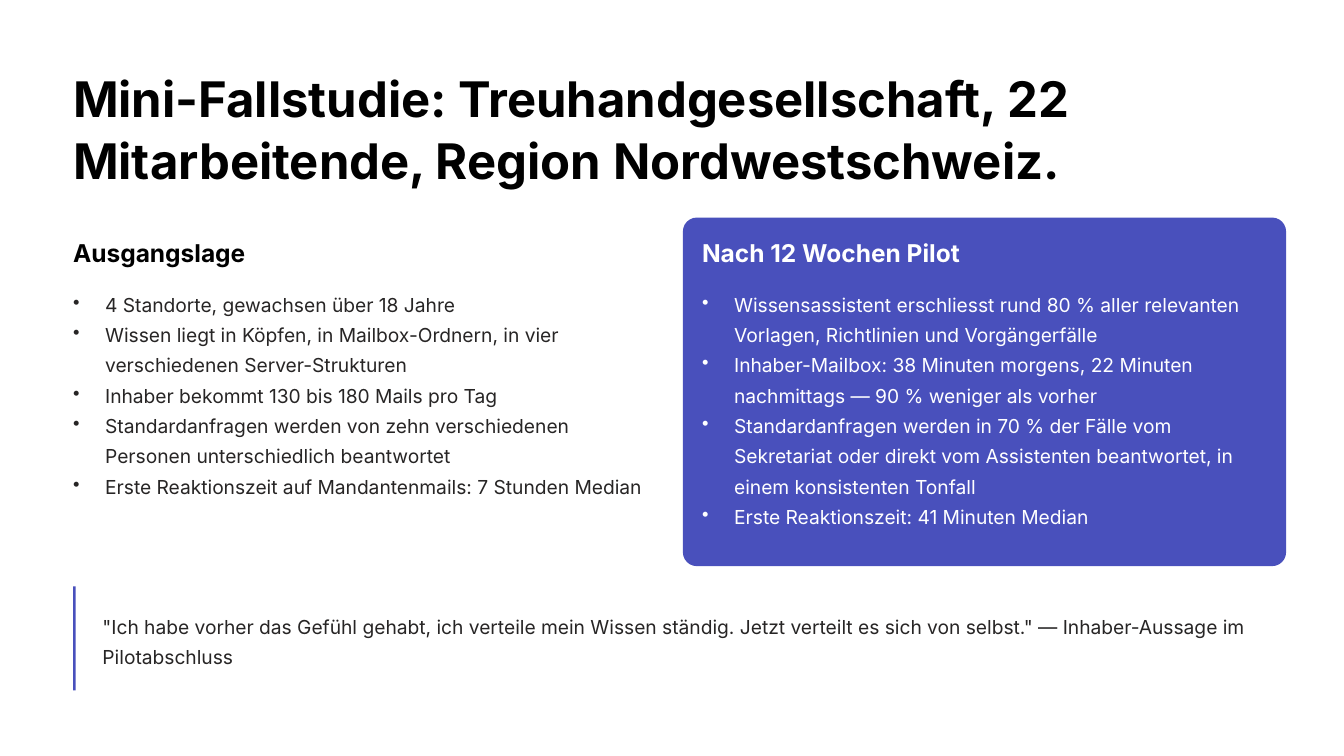
from lxml.etree import SubElement
from pptx import Presentation
from pptx.dml.color import RGBColor
from pptx.enum.shapes import MSO_SHAPE
from pptx.oxml.ns import qn
from pptx.util import Cm, Pt

BLACK = RGBColor(0x00, 0x00, 0x00)
WHITE = RGBColor(0xFF, 0xFF, 0xFF)
GREY = RGBColor(0x27, 0x25, 0x25)
BLUE = RGBColor(0x49, 0x50, 0xBC)

TITLE = {"size": Pt(42), "bold": True, "name": "Inter"}
HEAD = {"size": Pt(21), "bold": True, "name": "Inter"}
BODY = {"size": Pt(16.5), "bold": False, "name": "Inter"}

EDGE = 2.21
HANG = Cm(0.97)

BEFORE = [
    "4 Standorte, gewachsen über 18 Jahre",
    "Wissen liegt in Köpfen, in Mailbox-Ordnern, in vier verschiedenen Server-Strukturen",
    "Inhaber bekommt 130 bis 180 Mails pro Tag",
    "Standardanfragen werden von zehn verschiedenen Personen unterschiedlich beantwortet",
    "Erste Reaktionszeit auf Mandantenmails: 7 Stunden Median",
]
AFTER = [
    "Wissensassistent erschliesst rund 80 % aller relevanten Vorlagen, Richtlinien und Vorgängerfälle",
    "Inhaber-Mailbox: 38 Minuten morgens, 22 Minuten nachmittags — 90 % weniger als vorher",
    "Standardanfragen werden in 70 % der Fälle vom Sekretariat oder direkt vom Assistenten "
    "beantwortet, in einem konsistenten Tonfall",
    "Erste Reaktionszeit: 41 Minuten Median",
]
QUOTE = (
    '"Ich habe vorher das Gefühl gehabt, ich verteile mein Wissen ständig. '
    'Jetzt verteilt es sich von selbst." — Inhaber-Aussage im Pilotabschluss'
)


def add_text(slide, box, lines, style, color, pitch, dots=False):
    """Place a text box without insets, one paragraph per line."""
    frame = slide.shapes.add_textbox(*map(Cm, box)).text_frame
    frame.word_wrap = True
    for side in ("left", "top", "right", "bottom"):
        setattr(frame, f"margin_{side}", 0)
    for i, line in enumerate(lines):
        para = frame.paragraphs[0] if i == 0 else frame.add_paragraph()
        if dots:
            props = para._p.get_or_add_pPr()
            props.set("marL", str(HANG))
            props.set("indent", str(-HANG))
            SubElement(props, qn("a:buChar")).set("char", "•")
        para.line_spacing = Pt(pitch)
        run = para.add_run()
        run.text = line
        for key, value in style.items():
            setattr(run.font, key, value)
        run.font.color.rgb = color


def add_block(slide, kind, box):
    """Place a plain blue shape and return it."""
    shape = slide.shapes.add_shape(kind, *map(Cm, box))
    shape.shadow.inherit = False
    shape.fill.solid()
    shape.fill.fore_color.rgb = BLUE
    shape.line.fill.background()
    return shape


def add_column(slide, box, head, items, tint, color):
    """Place a heading with its bullet list below."""
    left, top, width, height = box
    add_text(slide, (left, top, width, 0.94), [head], HEAD, tint, 26.5)
    add_text(slide, (left, top + 1.5, width, height - 1.5), items, BODY, color, 26, True)


def add_card(slide, box, head, items):
    """Place a rounded blue card holding a column."""
    left, top, width, height = box
    card = add_block(slide, MSO_SHAPE.ROUNDED_RECTANGLE, box)
    card.adjustments[0] = 0.04
    inner = (left + 0.58, top + 0.56, width - 1.2, height - 1)
    add_column(slide, inner, head, items, WHITE, WHITE)


def add_quote(slide, box, text):
    """Place a quote beside an upright bar."""
    left, top, width, height = box
    inner = (left + 0.89, top + 0.66, width - 0.89, height - 1.27)
    add_text(slide, inner, [text], BODY, GREY, 26)
    add_block(slide, MSO_SHAPE.RECTANGLE, (left, top, 0.08, height))


def main():
    """Build the slide and save it."""
    deck = Presentation()
    deck.slide_width, deck.slide_height = Cm(40.64), Cm(22.86)
    slide = deck.slides.add_slide(deck.slide_layouts[6])
    slide.background.fill.solid()
    slide.background.fill.fore_color.rgb = WHITE
    title = "Mini-Fallstudie: Treuhandgesellschaft, 22 Mitarbeitende, Region Nordwestschweiz."
    add_text(slide, (EDGE, 1.98, 36.22, 3.73), [title], TITLE, BLACK, 53)
    add_column(slide, (EDGE, 7.14, 17.37, 9.76), "Ausgangslage", BEFORE, BLACK, GREY)
    add_card(slide, (20.65, 6.58, 18.24, 10.54), "Nach 12 Wochen Pilot", AFTER)
    add_quote(slide, (EDGE, 17.73, 36.22, 3.15), QUOTE)
    deck.save("out.pptx")


if __name__ == "__main__":
    main()
